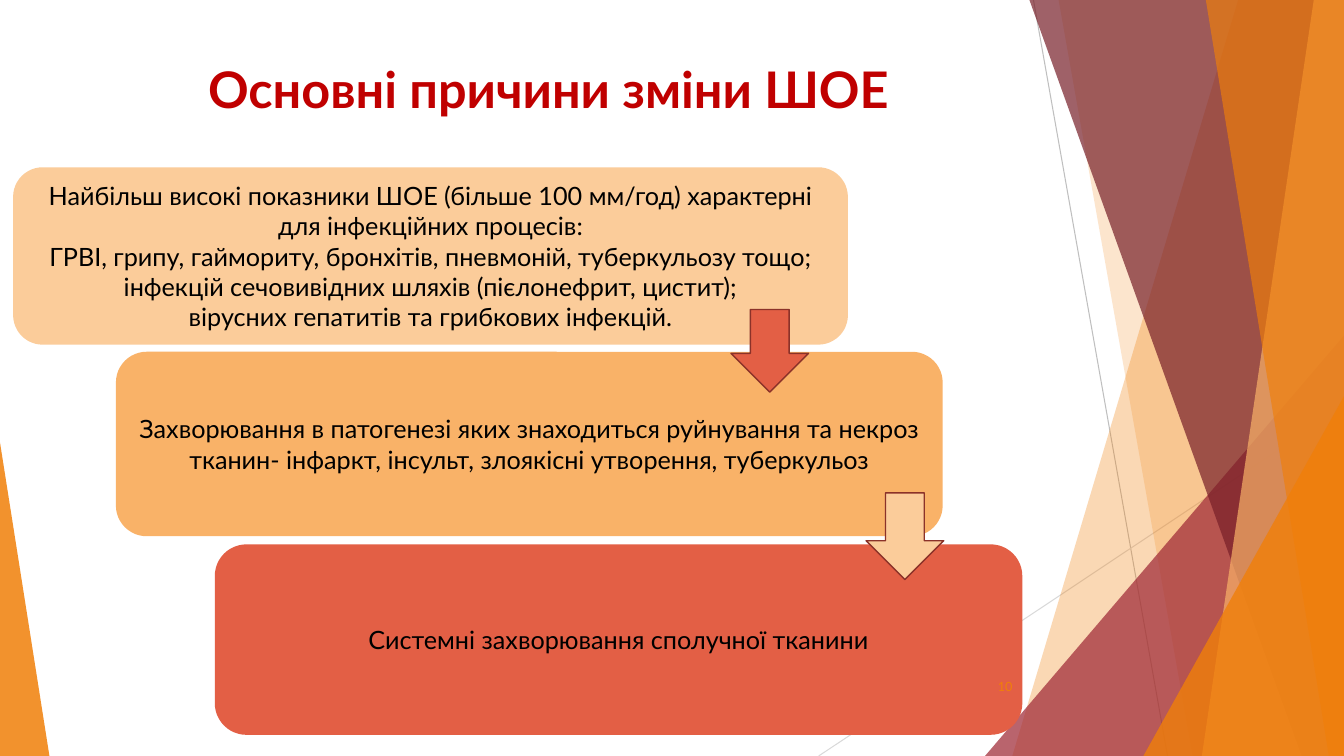
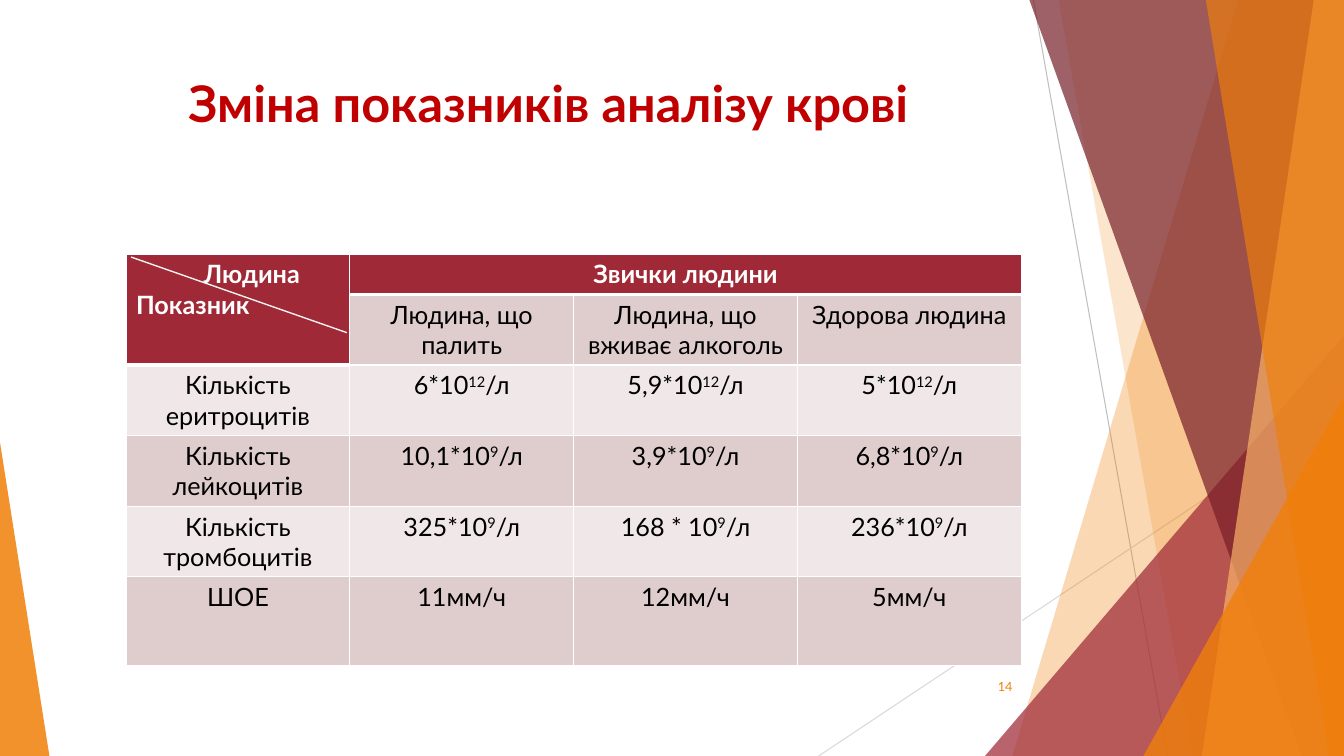
from lxml import etree
from pptx import Presentation
from pptx.dml.color import RGBColor
from pptx.enum.shapes import MSO_CONNECTOR, MSO_SHAPE as SHAPE
from pptx.enum.text import MSO_ANCHOR as ANCHOR, PP_ALIGN as ALIGN
from pptx.oxml.ns import qn
from pptx.util import Inches, Pt

FONT = "Lato"
WIDTH, HEIGHT = 13.33, 7.5
ORANGE, WINE, DARK_WINE = "F07F09", "9F2936", "771F28"
PEACH, APRICOT, CORAL, RUST = "FBCC9A", "F9B268", "E35F45", "8B3229"
RED, BLACK, WHITE = "C00000", "000000", "FFFFFF"
ROW_TINTS = ("F0E8E8", "DFCDCE")

# start, end, colour
BACK_LINES = [((10.25, 0), (11.58, 7.5), "BFBFBF"),
              ((13.33, 4.03), (8.12, 7.5), "D9D9D9")]
# A band gives its left edge at the top and at the bottom; a triangle its
# left, top, width and apex position. Then colour and opacity in percent.
DECOR = [
    ("band", (12.28, 10.04), ORANGE, 30),
    ("band", (10.5, 11.83), ORANGE, 20),
    ("triangle", (9.77, 3.33, 3.56, 1), WINE, 72),
    ("band", (10.21, 12.91), DARK_WINE, 70),
    ("band", (13.03, 11.92), APRICOT, 70),
    ("band", (11.96, 13.18), ORANGE, 65),
    ("triangle", (11.34, 3.93, 1.99, 1), ORANGE, 80),
    ("triangle", (0, 4.39, 0.49, 0), ORANGE, 85),
]

CAUSES = [
    ((0.13, 1.66, 8.28, 1.76), PEACH, [
        "Найбільш високі показники ШОЕ (більше 100 мм/год) характерні "
        "для інфекційних процесів:",
        "ГРВІ, грипу, гаймориту, бронхітів, пневмоній, туберкульозу тощо;",
        "інфекцій сечовивідних шляхів (пієлонефрит, цистит);",
        "вірусних гепатитів та грибкових інфекцій."]),
    ((1.15, 3.49, 8.2, 1.83), APRICOT, [
        "Захворювання в патогенезі яких знаходиться руйнування та некроз "
        "тканин- інфаркт, інсульт, злоякісні утворення, туберкульоз"]),
    ((2.13, 5.4, 8.01, 1.89), CORAL, ["Системні захворювання сполучної тканини"]),
]
ARROWS = [((7.25, 3.07, 0.77, 0.82), CORAL), ((8.59, 4.89, 0.77, 0.86), PEACH)]

CORNER = ["Людина", "Показник"]
HABITS = "Звички людини"
GROUPS = ["Людина, що палить", "Людина, що вживає алкоголь", "Здорова людина"]
# row label, values, power of ten (if any), unit
INDICATORS = [
    ("Кількість еритроцитів", ["6*10", "5,9*10", "5*10"], "12", "/л"),
    ("Кількість лейкоцитів", ["10,1*10", "3,9*10", "6,8*10"], "9", "/л"),
    ("Кількість тромбоцитів", ["325*10", "168 * 10", "236*10"], "9", "/л"),
    ("ШОЕ", ["11", "12", "5"], "", "мм/ч"),
]
TABLE_LEFT, TABLE_TOP, COL_WIDTH = 1.25, 2.52, 2.22
ROW_HEIGHTS = [0.4, 0.7, 0.7, 0.7, 0.7, 0.88]


def rgb(color):
    return RGBColor.from_string(color)


def inches(values):
    return [Inches(v) for v in values]


def add_run(p, text, size, color, bold=False):
    r = p.add_run()
    r.text = text
    r.font.name, r.font.size, r.font.bold = FONT, Pt(size), bold
    r.font.color.rgb = rgb(color)
    return r


def write(tf, lines, size, color, bold=False, align=ALIGN.CENTER):
    tf.word_wrap = True
    for i, line in enumerate(lines):
        p = tf.add_paragraph() if i else tf.paragraphs[0]
        p.alignment = align
        add_run(p, line, size, color, bold)


def paint(sp, color, opacity=100, line=None):
    sp.shadow.inherit = False
    sp.fill.solid()
    sp.fill.fore_color.rgb = rgb(color)
    if opacity < 100:
        clr = sp.fill._xPr.find(qn("a:solidFill"))[0]
        etree.SubElement(clr, qn("a:alpha")).set("val", str(opacity * 1000))
    if line:
        sp.line.color.rgb = rgb(line)
        sp.line.width = Pt(1)
    else:
        sp.line.fill.background()


def add_line(s, start, end, color, width):
    c = s.shapes.add_connector(MSO_CONNECTOR.STRAIGHT, *inches(start + end))
    c.line.color.rgb = rgb(color)
    c.line.width = Pt(width)
    etree.SubElement(c._element.spPr, qn("a:effectLst"))


def add_text(s, box, text, size, color, bold=False, align=ALIGN.CENTER,
             anchor=ANCHOR.TOP):
    tf = s.shapes.add_textbox(*inches(box)).text_frame
    tf.vertical_anchor = anchor
    write(tf, [text], size, color, bold, align)


def add_band(s, top_x, bottom_x):
    start, *rest = [inches(pt) for pt in (
        (top_x, 0), (WIDTH, 0), (WIDTH, HEIGHT), (bottom_x, HEIGHT))]
    builder = s.shapes.build_freeform(*start)
    builder.add_line_segments(rest, close=True)
    return builder.convert_to_shape()


def add_triangle(s, left, top, width, apex):
    sp = s.shapes.add_shape(SHAPE.ISOSCELES_TRIANGLE,
                            *inches((left, top, width, HEIGHT - top)))
    sp.adjustments[0] = apex
    return sp


def new_slide(prs, title, title_top):
    s = prs.slides.add_slide(prs.slide_layouts[6])
    for start, end, color in BACK_LINES:
        add_line(s, start, end, color, 0.75)
    for kind, place, color, opacity in DECOR:
        draw = add_band if kind == "band" else add_triangle
        paint(draw(s, *place), color, opacity)
    add_text(s, (0.74, title_top, 9.4, 1.44), title, 36, RED, bold=True)
    return s


def add_number(s, number):
    add_text(s, (9.39, 6.61, 0.75, 0.4), number, 9, ORANGE,
             align=ALIGN.RIGHT, anchor=ANCHOR.MIDDLE)


def style_cell(cell, color, bottom=1):
    tcPr = cell._tc.get_or_add_tcPr()
    for side, width in (("L", 1), ("R", 1), ("T", 1), ("B", bottom)):
        ln = etree.SubElement(tcPr, qn(f"a:ln{side}"), w=str(Pt(width)))
        fill = etree.SubElement(ln, qn("a:solidFill"))
        etree.SubElement(fill, qn("a:srgbClr"), val=WHITE)
    cell.fill.solid()
    cell.fill.fore_color.rgb = rgb(color)


def write_value(cell, value, power, unit):
    write(cell.text_frame, [value], 18, BLACK)
    p = cell.text_frame.paragraphs[0]
    if power:
        r = add_run(p, power, 18, BLACK)
        r._r.get_or_add_rPr().set("baseline", "30000")
    add_run(p, unit, 18, BLACK)


def add_indicator_table(s):
    rows, cols = len(ROW_HEIGHTS), len(GROUPS) + 1
    table = s.shapes.add_table(rows, cols, *inches(
        (TABLE_LEFT, TABLE_TOP, COL_WIDTH * cols, sum(ROW_HEIGHTS)))).table
    table.first_row = table.horz_banding = False
    for col in table.columns:
        col.width = Inches(COL_WIDTH)
    for r, height in enumerate(ROW_HEIGHTS):
        table.rows[r].height = Inches(height)
        for c in range(cols):
            header = r == 0 or (r == 1 and c == 0)
            style_cell(table.cell(r, c), WINE if header else ROW_TINTS[r % 2],
                       3 if header else 1)

    corner, habits = table.cell(0, 0), table.cell(0, 1)
    corner.merge(table.cell(1, 0))
    habits.merge(table.cell(0, cols - 1))
    write(corner.text_frame, CORNER, 18, WHITE, True, ALIGN.LEFT)
    indent = corner.text_frame.paragraphs[0]._p.get_or_add_pPr()
    indent.set("marL", str(Inches(0.67)))
    write(habits.text_frame, [HABITS], 18, WHITE, True)
    for c, group in enumerate(GROUPS, 1):
        write(table.cell(1, c).text_frame, [group], 18, BLACK)
    for r, (label, values, power, unit) in enumerate(INDICATORS, 2):
        write(table.cell(r, 0).text_frame, [label], 18, BLACK)
        for c, value in enumerate(values, 1):
            write_value(table.cell(r, c), value, power, unit)


def build_causes(prs):
    s = new_slide(prs, "Основні причини зміни ШОЕ", 0.53)
    for box, color, lines in CAUSES:
        sp = s.shapes.add_shape(SHAPE.ROUNDED_RECTANGLE, *inches(box))
        paint(sp, color)
        sp.text_frame.vertical_anchor = ANCHOR.MIDDLE
        write(sp.text_frame, lines, 18, BLACK)
    for box, color in ARROWS:
        paint(s.shapes.add_shape(SHAPE.DOWN_ARROW, *inches(box)), color, line=RUST)
    add_number(s, "10")


def build_indicators(prs):
    s = new_slide(prs, "Зміна показників аналізу крові", 0.67)
    add_indicator_table(s)
    add_line(s, (1.3, 2.55), (3.44, 3.3), "F2F2F2", 1)
    add_number(s, "14")


def main():
    prs = Presentation()
    prs.slide_width, prs.slide_height = inches((WIDTH, HEIGHT))
    build_causes(prs)
    build_indicators(prs)
    prs.save("out.pptx")


if __name__ == "__main__":
    main()
